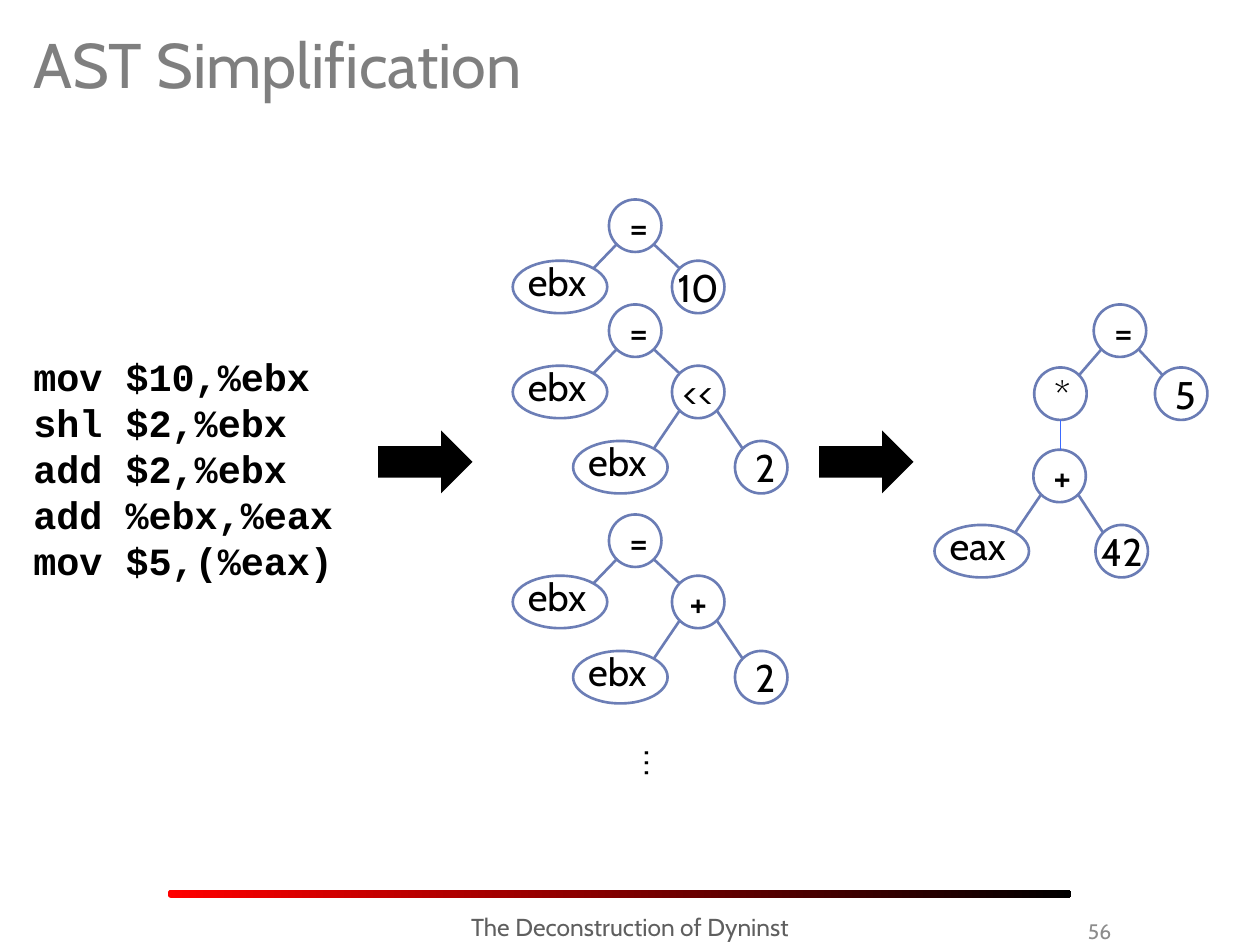
import pptx
import pptx.util
import pptx.dml.color
import pptx.enum.shapes
import pptx.enum.text
import pptx.oxml.ns
import lxml.etree

Pt = pptx.util.Pt
SHAPE = pptx.enum.shapes.MSO_SHAPE
ALIGN = pptx.enum.text.PP_ALIGN
ANCHOR = pptx.enum.text.MSO_ANCHOR

COLORS = {
    "black": "000000", "white": "FFFFFF", "red": "FF0000",
    "title": "7F7F7F", "footer": "5F5F5F", "number": "8C8C8C",
    "oval": "6C7EB6", "circle": "6A7CB5", "stem": "3B6AFF",
}
NODE = 30      # height of every node, width of a circle
OVAL = 54      # width of a register node
DIAGONAL = 0.5 - 0.5 ** 0.5 / 2    # where an edge touches an ellipse


def color(name):
    return pptx.dml.color.RGBColor.from_string(COLORS[name])


def write(shape, text, size=22, font="Cabin", ink="black", bold=False,
          align=ALIGN.LEFT, anchor=ANCHOR.TOP, wrap=True, pitch=None):
    frame = shape.text_frame
    frame.word_wrap = wrap
    frame.vertical_anchor = anchor
    for index, line in enumerate(text.split("\n")):
        para = frame.add_paragraph() if index else frame.paragraphs[0]
        para.alignment = align
        if pitch:
            para.line_spacing = Pt(pitch)
        span = para.add_run()
        span.text = line
        span.font.size = Pt(size)
        span.font.name = font
        span.font.bold = bold
        span.font.color.rgb = color(ink)
    return shape


def add_text(page, left, top, width, height, text, **style):
    box = page.shapes.add_textbox(Pt(left), Pt(top), Pt(width), Pt(height))
    return write(box, text, **style)


def add_shape(page, kind, left, top, width, height, fill, line=None):
    shape = page.shapes.add_shape(kind, Pt(left), Pt(top), Pt(width), Pt(height))
    shape.shadow.inherit = False
    shape.fill.solid()
    shape.fill.fore_color.rgb = color(fill)
    if line:
        shape.line.color.rgb = color(line)
        shape.line.width = Pt(1.5)
    else:
        shape.line.fill.background()
    return shape


def add_line(page, start, end, ink="circle", width=1.5):
    line = page.shapes.add_connector(
        pptx.enum.shapes.MSO_CONNECTOR.STRAIGHT, *map(Pt, start + end))
    line.line.color.rgb = color(ink)
    line.line.width = Pt(width)
    lxml.etree.SubElement(line._element.spPr, pptx.oxml.ns.qn("a:effectLst"))


def add_node(page, left, top, text, wrap=True):
    """Registers are wide ovals with a label on top, the rest are circles."""
    if text in ("ebx", "eax"):
        add_shape(page, SHAPE.OVAL, left, top, OVAL, NODE, "white", "oval")
        add_text(page, left + 1.5, top - 5, OVAL, 34, text)
    else:
        circle = add_shape(page, SHAPE.OVAL, left, top, NODE, NODE, "white", "circle")
        write(circle, text, align=ALIGN.CENTER, anchor=ANCHOR.MIDDLE, wrap=wrap)


def add_tree(page, left, top, nodes, edges):
    """Nodes are (x, y, text, wrap) in the tree's box; edges are (parent, child)."""
    for x, y, text, wrap in nodes:
        add_node(page, left + x, top + y, text, wrap)
    for parent, child in edges:
        (px, py, *_), (cx, cy, label, _) = nodes[parent], nodes[child]
        width = OVAL if label in ("ebx", "eax") else NODE
        if abs(px - cx) < 2:    # child straight below its parent
            x = left + px + NODE / 2
            add_line(page, (x, top + py + NODE), (x, top + cy), "stem", 0.75)
            continue
        near, far = DIAGONAL, 1 - DIAGONAL
        child_side, parent_side = (near, far) if cx > px else (far, near)
        add_line(page,
                 (left + cx + width * child_side, top + cy + NODE * near),
                 (left + px + NODE * parent_side, top + py + NODE * far))


def add_assignment(page, left, top, value, operand=None):
    """Tree for ebx = value, or ebx = ebx <value> operand."""
    nodes = [(55, 0, "=", True), (0, 35, "ebx", True), (91, 35, value, False)]
    edges = [(0, 1), (0, 2)]
    if operand:
        nodes += [(34.5, 78, "ebx", True), (127, 78, operand, True)]
        edges += [(2, 3), (2, 4)]
    add_tree(page, left, top, nodes, edges)


def add_result(page, left, top):
    nodes = [(91, 0, "=", True), (57, 36, "*", True), (126, 36, "5", True),
             (56.5, 83, "+", True), (0, 126, "eax", True), (92, 126, "42", False)]
    add_tree(page, left, top, nodes, [(0, 1), (0, 2), (1, 3), (3, 4), (3, 5)])


def add_footer(page, left, top):
    bar = add_shape(page, SHAPE.ROUNDED_RECTANGLE, left, top, 516, 4.5, "black")
    bar.adjustments[0] = 0.33
    bar.fill.gradient()
    bar.fill.gradient_angle = 0
    for stop, place, name in zip(bar.fill.gradient_stops, (0, 1), ("red", "black")):
        stop.position = place
        stop.color.rgb = color(name)
    add_text(page, left + 78, top + 9, 372, 29, "The Deconstruction of Dyninst",
             size=14, ink="footer", align=ALIGN.CENTER)
    add_text(page, left + 450, top + 9, 96, 29, "56", size=12, ink="number",
             align=ALIGN.RIGHT, anchor=ANCHOR.MIDDLE)


def add_code(page, left, top):
    code = "mov $10,%ebx\nshl $2,%ebx\nadd $2,%ebx\nadd %ebx,%eax\nmov $5,(%eax)"
    box = add_text(page, left, top, 216, 140, code, font="Courier New",
                   bold=True, pitch=26.4)
    box.text_frame.margin_top = Pt(6.5)


def main():
    deck = pptx.Presentation()
    deck.slide_width, deck.slide_height = Pt(720), Pt(540)
    page = deck.slides.add_slide(deck.slide_layouts[6])

    # Title and footer
    add_text(page, 12, 6, 696, 60, "AST Simplification", size=36,
             ink="title", anchor=ANCHOR.MIDDLE)
    add_footer(page, 96, 508.5)

    # Machine code, one tree per instruction, simplified tree
    add_code(page, 12, 195)
    for top, value, operand in ((114, "10", None), (174, "<<", "2"), (294, "+", "2")):
        add_assignment(page, 293, top, value, operand)
    dots = add_text(page, 348.5, 432.5, 54, 29, "…", size=18, font="Arial")
    dots.rotation = 90
    add_result(page, 534, 174)

    # Arrows between the stages
    for left in (216, 468):
        add_shape(page, SHAPE.RIGHT_ARROW, left, 246, 54, 36, "black")

    deck.save("out.pptx")


if __name__ == "__main__":
    main()
